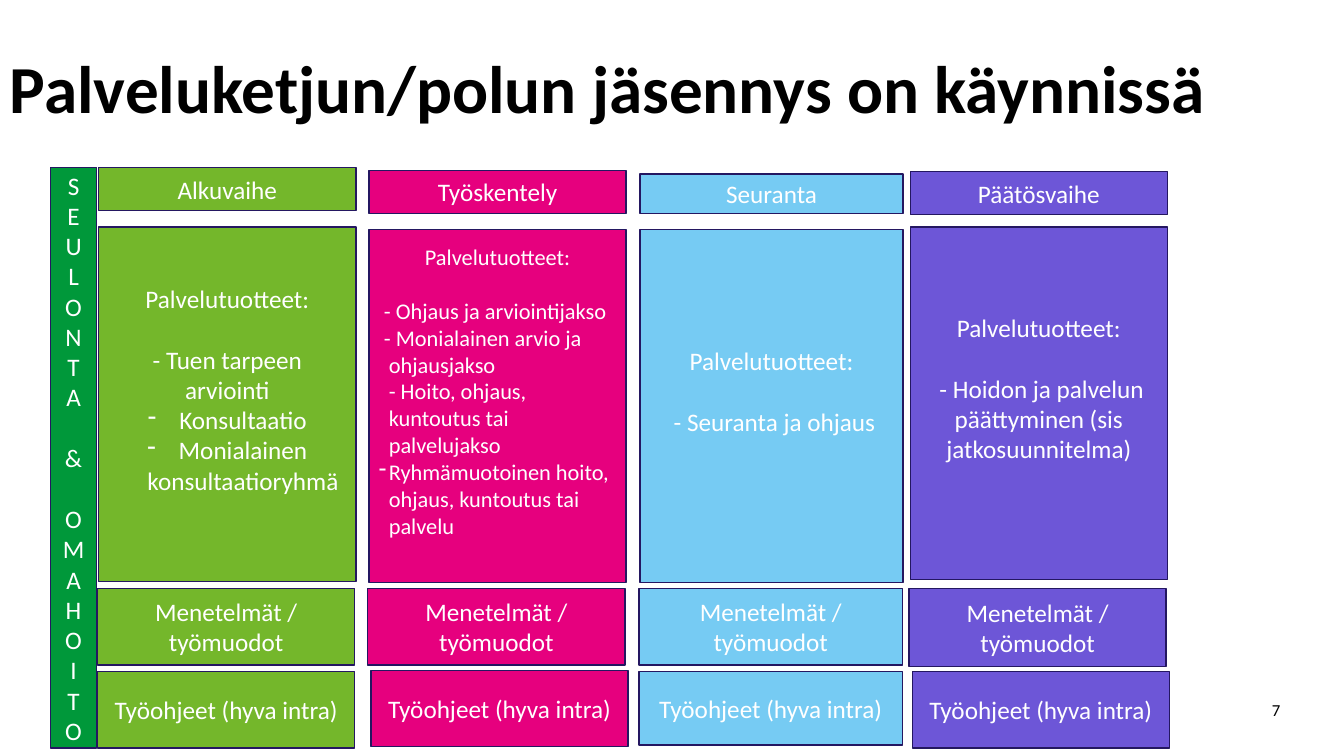
import pptx
import pptx.dml.color
import pptx.enum.shapes
import pptx.enum.text
import pptx.oxml.ns
import pptx.util
from lxml import etree

Cm = pptx.util.Cm
Pt = pptx.util.Pt
RGBColor = pptx.dml.color.RGBColor
ALIGN = pptx.enum.text.PP_ALIGN

BLACK = RGBColor(0x00, 0x00, 0x00)
WHITE = RGBColor(0xFF, 0xFF, 0xFF)
NAVY = RGBColor(0x24, 0x17, 0x61)
DARK_GREEN = RGBColor(0x00, 0x98, 0x3A)
GREEN = RGBColor(0x74, 0xB7, 0x2B)
PINK = RGBColor(0xE6, 0x00, 0x7E)
SKY = RGBColor(0x76, 0xCB, 0xF3)
VIOLET = RGBColor(0x6D, 0x56, 0xD7)

LINE_HEIGHT = 1.22  # height of a text line relative to its font size


def add_text(frame, text, size=18, color=WHITE, bold=False, align=ALIGN.CENTER,
             margin=0, indent=0, bullet=None, before=0, after=0, spacing=None):
    """Write one paragraph; margin and indent are in cm, before and after in lines."""
    paragraph = frame.paragraphs[0]
    if paragraph.runs:
        paragraph = frame.add_paragraph()
    paragraph.alignment = align
    paragraph.line_spacing = spacing
    paragraph.space_before = Pt(before * size * LINE_HEIGHT)
    paragraph.space_after = Pt(after * size * LINE_HEIGHT)
    properties = paragraph._p.get_or_add_pPr()
    properties.set("marL", str(Cm(margin)))
    properties.set("indent", str(Cm(indent)))
    if bullet:
        mark = etree.SubElement(properties, pptx.oxml.ns.qn("a:buChar"))
        mark.set("char", bullet)
    paragraph.text = text
    for run in paragraph.runs:
        run.font.name = "Calibri"
        run.font.size = Pt(size)
        run.font.bold = bold
        run.font.color.rgb = color


class SlideBuilder:
    def __init__(self, slide):
        self.slide = slide

    def prepare(self, shape):
        frame = shape.text_frame
        frame.word_wrap = True
        frame.vertical_anchor = pptx.enum.text.MSO_ANCHOR.MIDDLE
        return frame

    def label(self, place, text, **style):
        shape = self.slide.shapes.add_textbox(*map(Cm, place))
        add_text(self.prepare(shape), text, **style)

    def box(self, place, fill, lines, bottom=0.13):
        """Add a filled rectangle; lines are pairs of text and format."""
        shape = self.slide.shapes.add_shape(
            pptx.enum.shapes.MSO_SHAPE.RECTANGLE, *map(Cm, place))
        shape.shadow.inherit = False
        shape.fill.solid()
        shape.fill.fore_color.rgb = fill
        shape.line.color.rgb = NAVY
        shape.line.width = Pt(1)
        frame = self.prepare(shape)
        frame.margin_bottom = Cm(bottom)
        for text, style in lines:
            add_text(frame, text, **style)


DASH = dict(bullet="-", margin=0.79, indent=-0.79)
SMALL = dict(size=16, align=ALIGN.LEFT)
HANGING = dict(SMALL, margin=0.25, indent=-0.25)

# Each stage: name, colour, heading size, products,
# places of its heading, products, methods and instructions boxes (cm)
STAGES = [
    ("Alkuvaihe", GREEN, 18,
     [("- Tuen tarpeen arviointi", {}),
      ("Konsultaatio", DASH),
      ("Monialainen konsultaatioryhmä", DASH)],
     [(2.49, 4.22, 6.48, 1.09), (2.49, 5.72, 6.48, 8.94),
      (2.46, 14.83, 6.48, 1.93), (2.46, 16.92, 6.48, 1.93)]),
    ("Työskentely", PINK, 16,
     [(" - Ohjaus ja arviointijakso", SMALL),
      (" - Monialainen arvio ja ohjausjakso", HANGING),
      ("- Hoito, ohjaus,\vkuntoutus tai palvelujakso", dict(SMALL, margin=0.25)),
      ("Ryhmämuotoinen hoito, ohjaus, kuntoutus tai palvelu",
       dict(HANGING, bullet="-"))],
     [(9.3, 4.29, 6.48, 1.09), (9.3, 5.79, 6.48, 8.89),
      (9.27, 14.83, 6.48, 1.93), (9.35, 16.89, 6.48, 1.93)]),
    ("Seuranta", SKY, 18,
     [(" - Seuranta ja ohjaus", {})],
     [(16.13, 4.39, 6.63, 0.99), (16.13, 5.79, 6.63, 8.89),
      (16.1, 14.83, 6.65, 1.93), (16.1, 16.92, 6.65, 1.85)]),
    ("Päätösvaihe", VIOLET, 18,
     [(" - Hoidon ja palvelun päättyminen (sis jatkosuunnitelma)", {})],
     [(22.94, 4.32, 6.48, 1.09), (22.94, 5.72, 6.48, 8.89),
      (22.91, 14.83, 6.48, 1.96), (22.99, 16.92, 6.48, 1.93)]),
]


def main():
    presentation = pptx.Presentation()
    presentation.slide_width = Cm(33.87)
    presentation.slide_height = Cm(19.05)
    builder = SlideBuilder(presentation.slides.add_slide(presentation.slide_layouts[6]))

    # Title and slide number
    builder.label((0, 1.45, 31.12, 1.7), "Palveluketjun/polun jäsennys on käynnissä",
                  size=48, color=BLACK, bold=True, align=ALIGN.LEFT, spacing=0.9)
    builder.label((31.32, 17.37, 1.68, 1.02), "7", size=12, color=BLACK)

    # Stages, one column each
    for name, color, size, products, places in STAGES:
        heading, body, methods, instructions = places
        builder.box(heading, color, [(name, {})])
        intro = ("Palvelutuotteet:", dict(size=size, after=1))
        builder.box(body, color, [intro] + products, bottom=0.9)
        builder.box(methods, color, [("Menetelmät / työmuodot", {})])
        builder.box(instructions, color, [("Työohjeet (hyva intra)", {})])

    # Vertical strip, one letter per line
    letters = [(letter, {}) for letter in "SEULONTA"]
    letters.append(("&", dict(before=1, after=1)))
    letters += [(letter, {}) for letter in "OMAHOITO"]
    builder.box((1.27, 4.22, 1.17, 14.63), DARK_GREEN, letters)

    presentation.save("out.pptx")


if __name__ == "__main__":
    main()
